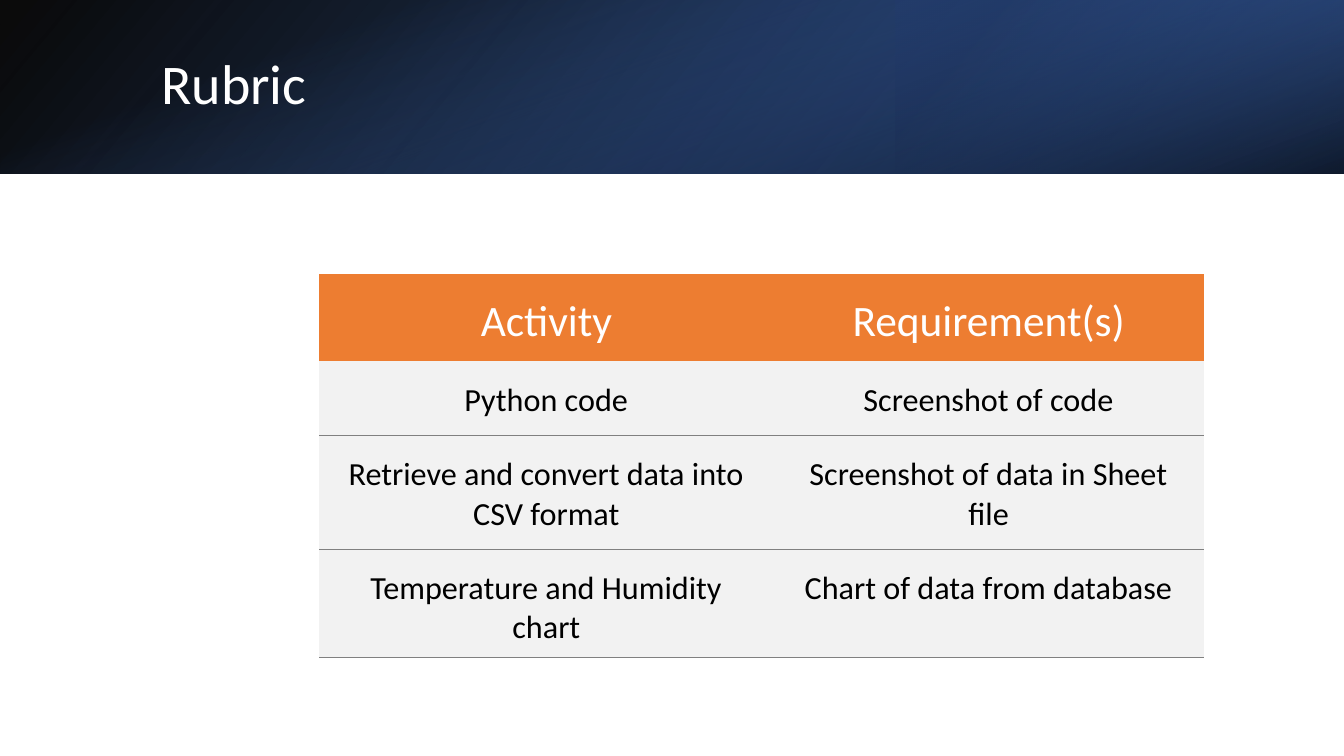
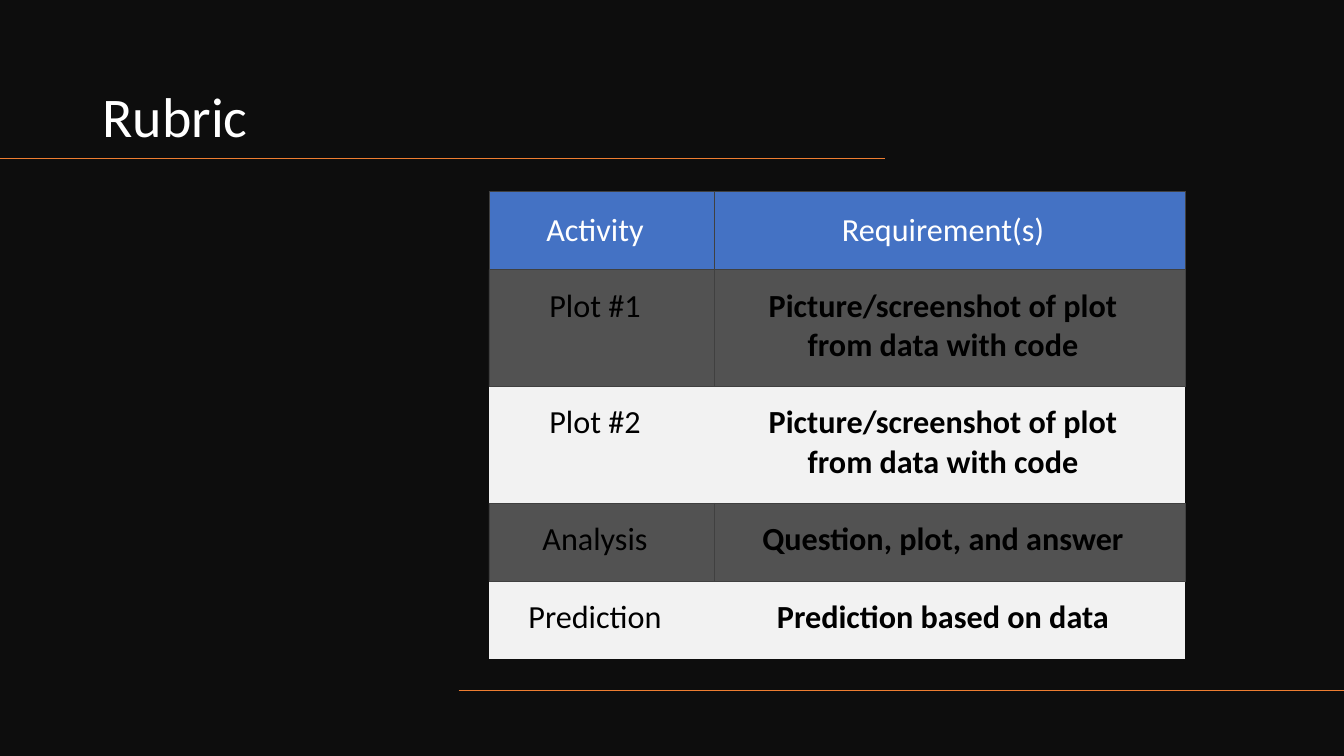
from lxml.etree import SubElement
from pptx import Presentation
from pptx.dml.color import RGBColor
from pptx.enum.shapes import MSO_CONNECTOR as Link, MSO_SHAPE as Shape
from pptx.enum.text import MSO_ANCHOR as Anchor, MSO_AUTO_SIZE as Fit, PP_ALIGN as Align
from pptx.oxml.ns import qn
from pptx.util import Emu, Pt

COLOURS = {
    "white": "FFFFFF", "black": "000000", "night": "0D0D0D",
    "navy": "203864", "royal": "2F5597", "blue": "4472C4", "orange": "ED7D31",
    "pale": "F2F2F2", "grey": "808080", "charcoal": "404040",
}
FONT = "Calibri"
COLUMNS, ROWS = 160, 90
UNIT = 76200  # one grid cell, a twelfth of an inch
BAND = 20.7  # height of the title band
PLAIN_TABLE = "{2D5ABB26-0587-4C30-8999-92F81FD0307C}"


def grid(*lengths):
    return [Emu(round(length * UNIT)) for length in lengths]


def colour(name):
    return RGBColor.from_string(COLOURS[name])


def add_alpha(node, opacity):
    SubElement(node, qn("a:alpha"), val=str(opacity * 1000))


def add_colour(parent, name, opacity=100):
    node = SubElement(parent, qn("a:srgbClr"), val=COLOURS[name])
    if opacity < 100:
        add_alpha(node, opacity)


class Deck:
    def __init__(self):
        self.deck = Presentation()
        self.deck.slide_width, self.deck.slide_height = grid(COLUMNS, ROWS)
        self.page = None

    def new_page(self):
        self.page = self.deck.slides.add_slide(self.deck.slide_layouts[5])

    def style(self, para, size, name, bold=False, align=Align.CENTER):
        para.alignment = align
        for span in para.runs:
            span.font.name, span.font.size, span.font.bold = FONT, Pt(size), bold
            span.font.color.rgb = colour(name)

    def title(self, text, at, anchor):
        box = self.page.shapes.title
        box.left, box.top, box.width, box.height = grid(*at)
        frame = box.text_frame
        frame.text = text
        frame.auto_size, frame.vertical_anchor = Fit.NONE, anchor
        frame.paragraphs[0].line_spacing = 0.9
        self.style(frame.paragraphs[0], 40, "white", align=Align.LEFT)
        self.page.shapes.element.append(box.element)  # bring to front

    def panel(self, at, fill=None):
        box = self.page.shapes.add_shape(Shape.RECTANGLE, *grid(*at))
        box.shadow.inherit = False
        box.line.fill.background()
        if fill:
            box.fill.solid()
            box.fill.fore_color.rgb = colour(fill)
        return box

    def gradient(self, at, stops, angle, turn=0, flip=False):
        box = self.panel(at)
        box.rotation = turn
        props = box.element.spPr
        if flip:
            props.find(qn("a:xfrm")).set("flipH", "1")
        fill = SubElement(props, qn("a:gradFill"), rotWithShape="1")
        props.find(qn("a:prstGeom")).addnext(fill)
        stop_list = SubElement(fill, qn("a:gsLst"))
        for place, name, opacity in stops:
            stop = SubElement(stop_list, qn("a:gs"), pos=str(place * 1000))
            add_colour(stop, name, opacity)
        SubElement(fill, qn("a:lin"), ang=str(angle * 60000), scaled="0")

    def rule(self, left, right, row):
        line = self.page.shapes.add_connector(
            Link.STRAIGHT, *grid(left, row, right, row))
        line.line.color.rgb, line.line.width = colour("orange"), Pt(1)
        SubElement(line.element.spPr, qn("a:effectLst"))

    def borders(self, cell, sides, name, width):
        props = cell._tc.get_or_add_tcPr()
        for place, side in enumerate(sides):
            edge = SubElement(props, qn("a:ln" + side), w=str(Pt(width)))
            add_colour(SubElement(edge, qn("a:solidFill")), name)
            props.insert(place, edge)

    def cell(self, cell, text, margins, size, text_colour, fill, opacity=100,
             bold=False, anchor=Anchor.TOP):
        cell.text_frame.text = text
        cell.vertical_anchor = anchor
        (cell.margin_left, cell.margin_top,
         cell.margin_right, cell.margin_bottom) = grid(*margins)
        self.style(cell.text_frame.paragraphs[0], size, text_colour, bold)
        cell.fill.solid()
        cell.fill.fore_color.rgb = colour(fill)
        if opacity < 100:
            add_alpha(cell._tc.tcPr.find(".//" + qn("a:srgbClr")), opacity)

    def table(self, left, top, widths, heights, rows, margins, head_fill,
              head_size, edge, shaded=(), bold_column=None):
        """edge is (colour, width, sides of head, of plain, of shaded rows)."""
        frame = self.page.shapes.add_table(
            len(rows), len(widths), *grid(left, top, sum(widths), sum(heights)))
        table = frame.table
        table.first_row = table.horz_banding = False
        table._tbl.tblPr.find(qn("a:tableStyleId")).text = PLAIN_TABLE
        for column, width in zip(table.columns, grid(*widths)):
            column.width = width
        for row, height in zip(table.rows, grid(*heights)):
            row.height = height
        edge_colour, edge_width, head_sides, plain_sides, shaded_sides = edge
        for r, texts in enumerate(rows):
            for c, text in enumerate(texts):
                cell = table.cell(r, c)
                if r == 0:
                    sides = head_sides
                    self.cell(cell, text, margins, head_size, "white",
                              head_fill, anchor=Anchor.MIDDLE)
                else:
                    sides = shaded_sides if r in shaded else plain_sides
                    self.cell(cell, text, margins, 23, "black", "pale",
                              30 if r in shaded else 100, c == bold_column)
                self.borders(cell, sides, edge_colour, edge_width)


def activity_rubric(deck):
    deck.new_page()
    # Title band of three layered gradients
    deck.gradient((0, 0, COLUMNS, BAND),
                  [(0, "black", 96), (100, "royal", 100)], 140, flip=True)
    deck.gradient((COLUMNS * 2 / 3, 0, COLUMNS / 3, BAND),
                  [(19, "navy", 68), (100, "blue", 79)], 320, 180, True)
    offset = (COLUMNS - BAND) / 2
    deck.gradient((offset, -offset, BAND, COLUMNS),
                  [(23, "blue", 0), (99, "black", 74)], 340, 90)
    deck.title("Rubric", (18, 4.5, 131.8, 11.5), Anchor.MIDDLE)
    # Requirements
    deck.table(38, 32.6, (54.1, 51.2), (10.4, 8.9, 13.5, 12.9), [
        ("Activity", "Requirement(s)"),
        ("Python code", "Screenshot of code"),
        ("Retrieve and convert data into CSV format",
         "Screenshot of data in Sheet file"),
        ("Temperature and Humidity chart", "Chart of data from database"),
    ], (2.3, 2.3, 2.3, 1.2), "orange", 31, ("grey", 0.75, "", "B", ""))


def plot_rubric(deck):
    deck.new_page()
    # Dark ground with title and rules
    deck.panel((0, 0, COLUMNS, ROWS), "night")
    deck.title("Rubric", (11, 5, 94.3, 13.4), Anchor.BOTTOM)
    deck.rule(0, 105.4, 18.9)
    deck.rule(54.6, COLUMNS, 82.2)
    # Requirements
    plot = "Picture/screenshot of plot from data with code"
    deck.table(58.2, 22.8, (26.9, 56), (9.3, 13.9, 13.9, 9.3, 9.3), [
        ("Activity", "Requirement(s)"),
        ("Plot #1", plot),
        ("Plot #2", plot),
        ("Analysis", "Question, plot, and answer"),
        ("Prediction", "Prediction based on data"),
    ], (2.6, 2, 4.2, 2), "blue", 23, ("charcoal", 0.5, "LRTB", "", "LRTB"),
        shaded=(1, 3), bold_column=1)


def main():
    deck = Deck()
    activity_rubric(deck)
    plot_rubric(deck)
    deck.deck.save("out.pptx")


if __name__ == "__main__":
    main()
